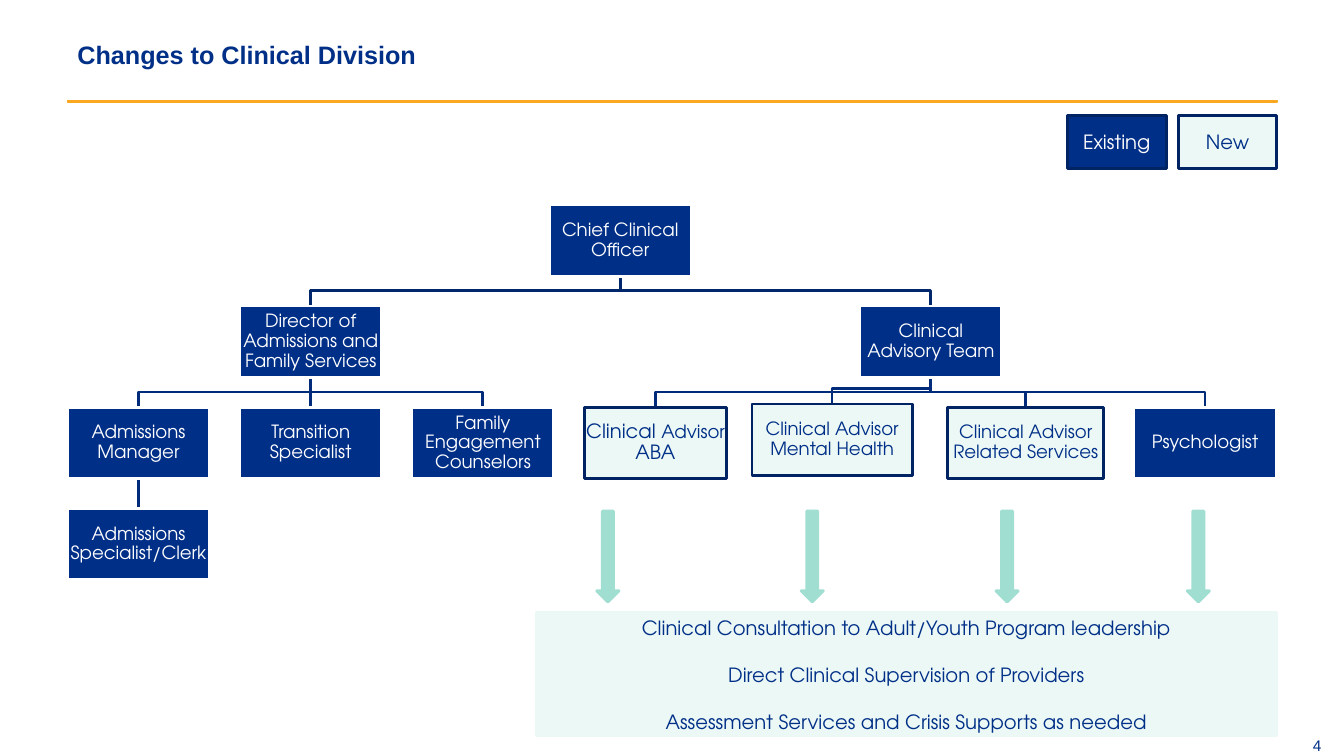
from lxml.etree import SubElement
from pptx import Presentation
from pptx.dml.color import RGBColor
from pptx.enum.shapes import MSO_CONNECTOR, MSO_SHAPE
from pptx.enum.text import MSO_ANCHOR, PP_ALIGN
from pptx.oxml.ns import qn
from pptx.util import Cm, Pt

NAVY, EDGE, PALE, MINT, WHITE = "002F87", "002364", "ECF8F6", "A1DED2", "FFFFFF"
WIRE, TRUNK = "002B7B", "00266C"
SANS, ROUND = "Arial", "TeX Gyre Adventor"
OLD, NEW = (NAVY, WHITE, WHITE), (PALE, EDGE, NAVY)  # fill, line, text

# All lengths in cm
WIDE, HIGH = 3.58, 1.8
TOP, STEP = 5.16, 2.55
LEFT, PITCH = 1.7, 4.34
DROP = 0.38  # from the crossbar down to the child box

# key: (text, left, row, width, lift, look)
ROLES = {
    "chief": ("Chief Clinical Officer", 13.84, 0, WIDE, 0, OLD),
    "director": ("Director of Admissions and Family Services", LEFT + PITCH, 1, WIDE, 0, OLD),
    "manager": ("Admissions Manager", LEFT, 2, WIDE, 0, OLD),
    "clerk": ("Admissions Specialist/Clerk", LEFT, 3, WIDE, 0, OLD),
    "transition": ("Transition Specialist", LEFT + PITCH, 2, WIDE, 0, OLD),
    "family": ("Family Engagement Counselors", LEFT + 2 * PITCH, 2, WIDE, 0, OLD),
    "team": ("Clinical Advisory Team", 21.67, 1, WIDE, 0, OLD),
    "aba": ("Clinical Advisor ABA", 14.73, 2, WIDE, 0, NEW),
    "mental": ("Clinical Advisor Mental Health", 18.95, 2, 4.04, 0.08, NEW),
    "related": ("Clinical Advisor Related Services", 23.88, 2, 3.94, 0, NEW),
    "psych": ("Psychologist", 28.58, 2, WIDE, 0, OLD),
}
SIZES = {"aba": (14, 13, 14)}  # one size per word
ELBOWS = [
    ("team", "psych", WIRE), ("team", "related", WIRE), ("team", "mental", WIRE),
    ("team", "aba", WIRE), ("chief", "team", TRUNK), ("director", "family", WIRE),
    ("director", "manager", WIRE), ("chief", "director", TRUNK),
]
STRAIGHT = [("director", "transition"), ("manager", "clerk")]
ARROWS = [15.04, 20.19, 25.1, 29.92]
DUTIES = [
    "Clinical Consultation to Adult/Youth Program leadership",
    "Direct Clinical Supervision of Providers",
    "Assessment Services and Crisis Supports as needed",
]
LEGEND = [("Existing", 26.9, (NAVY, EDGE, WHITE)), ("New", 29.69, NEW)]


def tint(hue):
    return RGBColor.from_string(hue)


def draw(kind, place, fill, edge, weight=2):
    shape = slide.shapes.add_shape(kind, *map(Cm, place))
    shape.shadow.inherit = False
    shape.fill.solid()
    shape.fill.fore_color.rgb = tint(fill)
    shape.line.color.rgb = tint(edge)
    shape.line.width = Pt(weight)
    return shape


def write(shape, lines, hue, size, font=ROUND, align=PP_ALIGN.CENTER,
          inset=None, gap=0, bold=False):
    """Put one paragraph per line, with gap points between them."""
    frame = shape.text_frame
    frame.word_wrap = True
    frame.vertical_anchor = MSO_ANCHOR.MIDDLE
    if inset is not None:
        frame.margin_left = frame.margin_right = Cm(inset)
        frame.margin_top = frame.margin_bottom = Cm(inset)
    for i, line in enumerate(lines):
        para = frame.paragraphs[0] if i == 0 else frame.add_paragraph()
        para.text = line
        para.alignment = align
        if i and gap:
            para.space_before = Pt(gap)
        para.font.name, para.font.size, para.font.bold = font, Pt(size), bold
        para.font.color.rgb = tint(hue)
    return frame


def spot(key):
    """Return left, top, width and height of a role's box."""
    _, left, row, width, lift, _ = ROLES[key]
    return left, TOP + row * STEP - lift, width, HIGH


def ends(head, child):
    """Return the bottom middle of head and the top middle of child."""
    x, y, w, h = spot(head)
    left, top, width, _ = spot(child)
    return x + w / 2, y + h, left + width / 2, top


def bend(head, child, hue):
    x, y, end, top = ends(head, child)
    bar = top - DROP
    pen = slide.shapes.build_freeform(Cm(x), Cm(y))
    pen.add_line_segments([(Cm(a), Cm(b)) for a, b in
                           ((x, bar), (end, bar), (end, top))], close=False)
    wire = pen.convert_to_shape()
    wire.shadow.inherit = False
    wire.fill.background()
    wire.line.color.rgb = tint(hue)
    wire.line.width = Pt(2)


deck = Presentation()
deck.slide_width, deck.slide_height = Cm(33.87), Cm(19.05)
slide = deck.slides.add_slide(deck.slide_layouts[6])

draw(MSO_SHAPE.RECTANGLE, (1.7, 2.54, 30.48, 0.03), "F5831F", "FAA721", 1)
title = slide.shapes.add_textbox(Cm(1.7), Cm(0.43), Cm(30.48), Cm(1.9))
write(title, ["Changes to Clinical Division"], NAVY, 18, SANS, PP_ALIGN.LEFT, bold=True)
number = slide.shapes.add_textbox(Cm(25.12), Cm(18.54), Cm(8.18), Cm(0.48))
write(number, ["4"], NAVY, 11, SANS, PP_ALIGN.RIGHT, 0)

for link in ELBOWS:
    bend(*link)
wires = []
for head, child in STRAIGHT:
    wire = slide.shapes.add_connector(MSO_CONNECTOR.STRAIGHT, *map(Cm, ends(head, child)))
    wire.line.color.rgb = tint(WIRE)
    wire.line.width = Pt(2)
    SubElement(wire._element.spPr, qn("a:effectLst"))
    wires.append((wire, head, child))

boxes = {}
for key, (text, *_, (fill, edge, ink)) in ROLES.items():
    box = boxes[key] = draw(MSO_SHAPE.RECTANGLE, spot(key), fill, edge)
    para = write(box, [text], ink, 13, inset=0.03).paragraphs[0]
    para.line_spacing = 0.9
    if key in SIZES:
        words = text.split()
        para.runs[0].text = words[0] + " "
        para.add_run().text = words[1]
        para.add_run().text = " " + words[2]
        for run, size in zip(para.runs, SIZES[key]):
            run.font.size = Pt(size)
for wire, head, child in wires:
    wire.begin_connect(boxes[head], 2)
    wire.end_connect(boxes[child], 0)

for left in ARROWS:
    draw(MSO_SHAPE.DOWN_ARROW, (left, 12.88, 0.56, 2.29), MINT, MINT)
panel = draw(MSO_SHAPE.RECTANGLE, (13.51, 15.44, 18.67, 3.1), PALE, PALE)
write(panel, DUTIES, NAVY, 14, gap=16.8)
for text, left, (fill, edge, ink) in LEGEND:
    write(draw(MSO_SHAPE.RECTANGLE, (left, 2.92, 2.49, 1.32), fill, edge), [text], ink, 14)

deck.save("out.pptx")
